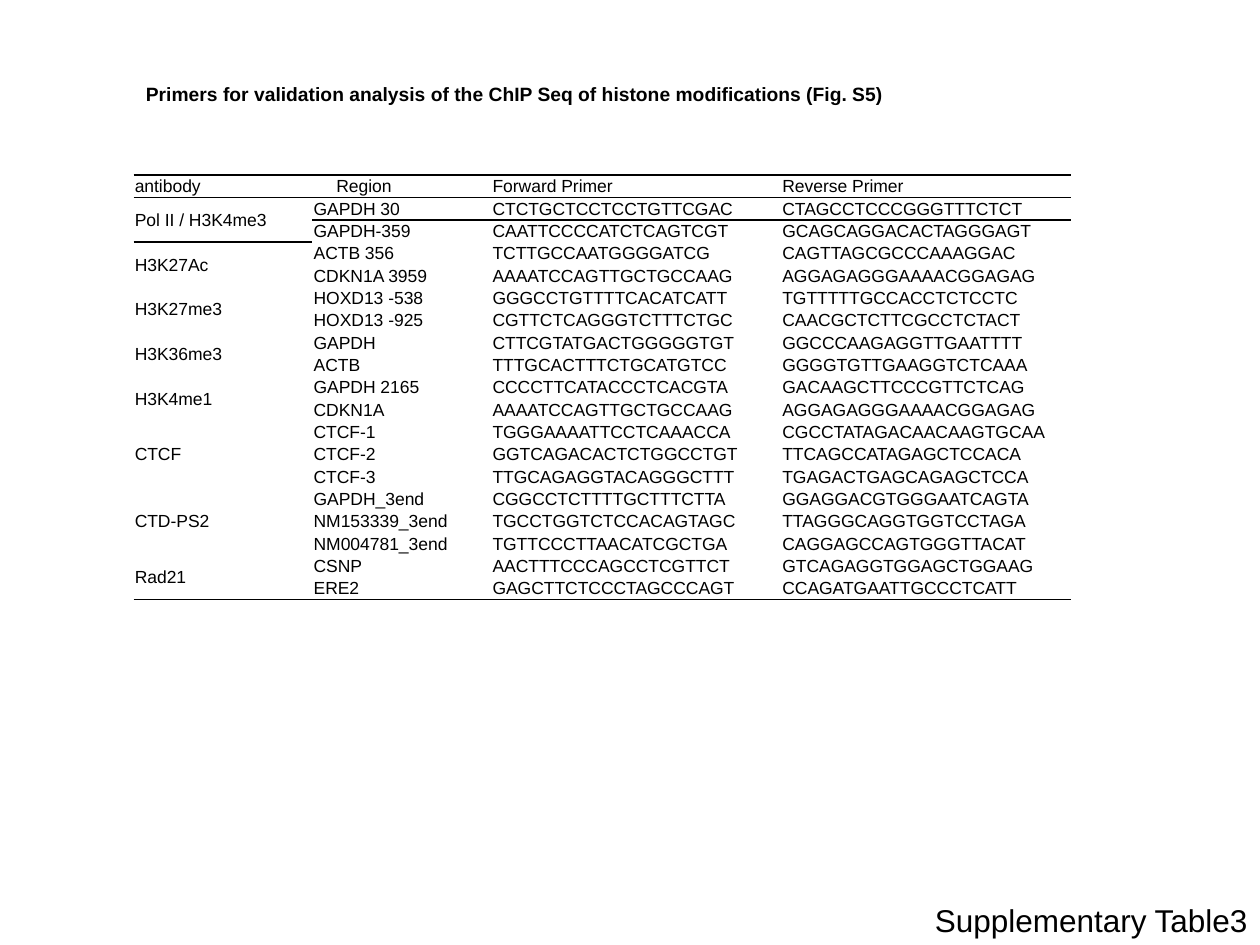
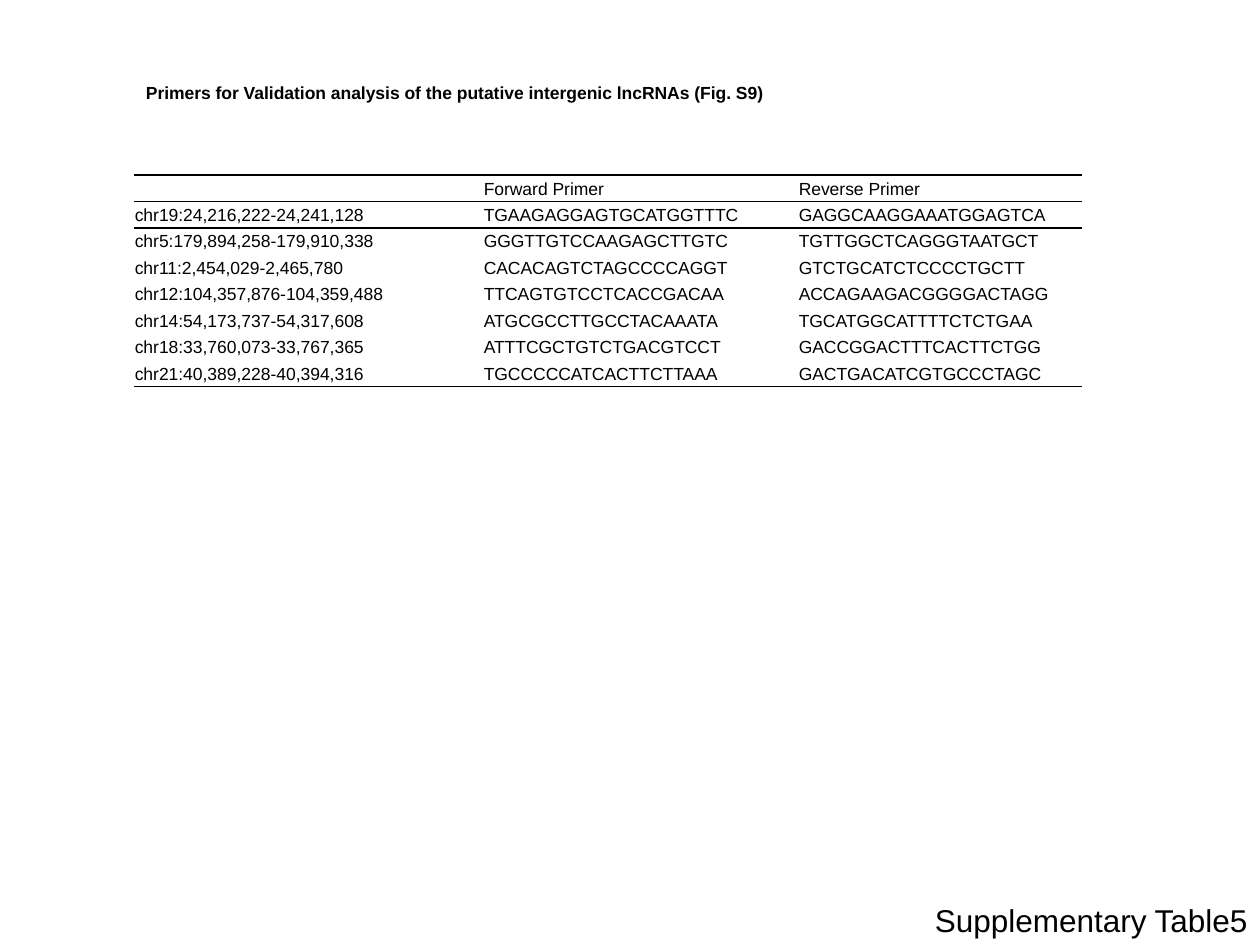
from dataclasses import dataclass

from lxml.etree import SubElement
from pptx import Presentation
from pptx.dml.color import RGBColor
from pptx.enum.text import MSO_ANCHOR, MSO_AUTO_SIZE, PP_ALIGN
from pptx.oxml.ns import qn
from pptx.slide import Slide
from pptx.table import Table, _Cell
from pptx.text.text import _Paragraph
from pptx.util import Inches, Pt

FONT = "Arial"
BLACK = "000000"
TABLE_SIZE = 10
CELL_INSET = 0.01
HEADING_INDENT = 0.19
RULE_WIDTH = Pt(1)
PLAIN_TABLE_STYLE = "{2D5ABB26-0587-4C30-8999-92F81FD0307C}"


@dataclass(frozen=True)
class PrimerTable:
    """A titled primer table; an empty first cell in the body continues the group above."""
    title: str
    title_size: float
    title_height: float
    footer: str
    column_widths: tuple[float, ...]
    row_height: float
    rows: tuple[tuple[str, ...], ...]
    indented_heading: str = ""


HISTONE_PRIMERS = PrimerTable(
    title="Primers for validation analysis of the ChIP Seq of histone modifications (Fig. S5)",
    title_size=11,
    title_height=0.29,
    footer="Supplementary Table3",
    column_widths=(1.42, 1.42, 2.3, 2.3),
    row_height=0.175,
    indented_heading="Region",
    rows=(
        ("antibody", "Region", "Forward Primer", "Reverse Primer"),
        ("Pol II / H3K4me3", "GAPDH 30", "CTCTGCTCCTCCTGTTCGAC", "CTAGCCTCCCGGGTTTCTCT"),
        ("", "GAPDH-359", "CAATTCCCCATCTCAGTCGT", "GCAGCAGGACACTAGGGAGT"),
        ("H3K27Ac", "ACTB 356", "TCTTGCCAATGGGGATCG", "CAGTTAGCGCCCAAAGGAC"),
        ("", "CDKN1A 3959", "AAAATCCAGTTGCTGCCAAG", "AGGAGAGGGAAAACGGAGAG"),
        ("H3K27me3", "HOXD13 -538", "GGGCCTGTTTTCACATCATT", "TGTTTTTGCCACCTCTCCTC"),
        ("", "HOXD13 -925", "CGTTCTCAGGGTCTTTCTGC", "CAACGCTCTTCGCCTCTACT"),
        ("H3K36me3", "GAPDH", "CTTCGTATGACTGGGGGTGT", "GGCCCAAGAGGTTGAATTTT"),
        ("", "ACTB", "TTTGCACTTTCTGCATGTCC", "GGGGTGTTGAAGGTCTCAAA"),
        ("H3K4me1", "GAPDH 2165", "CCCCTTCATACCCTCACGTA", "GACAAGCTTCCCGTTCTCAG"),
        ("", "CDKN1A", "AAAATCCAGTTGCTGCCAAG", "AGGAGAGGGAAAACGGAGAG"),
        ("CTCF", "CTCF-1", "TGGGAAAATTCCTCAAACCA", "CGCCTATAGACAACAAGTGCAA"),
        ("", "CTCF-2", "GGTCAGACACTCTGGCCTGT", "TTCAGCCATAGAGCTCCACA"),
        ("", "CTCF-3", "TTGCAGAGGTACAGGGCTTT", "TGAGACTGAGCAGAGCTCCA"),
        ("CTD-PS2", "GAPDH_3end", "CGGCCTCTTTTGCTTTCTTA", "GGAGGACGTGGGAATCAGTA"),
        ("", "NM153339_3end", "TGCCTGGTCTCCACAGTAGC", "TTAGGGCAGGTGGTCCTAGA"),
        ("", "NM004781_3end", "TGTTCCCTTAACATCGCTGA", "CAGGAGCCAGTGGGTTACAT"),
        ("Rad21", "CSNP", "AACTTTCCCAGCCTCGTTCT", "GTCAGAGGTGGAGCTGGAAG"),
        ("", "ERE2", "GAGCTTCTCCCTAGCCCAGT", "CCAGATGAATTGCCCTCATT"),
    ),
)

LNCRNA_PRIMERS = PrimerTable(
    title="Primers for Validation analysis of the putative intergenic lncRNAs (Fig. S9)",
    title_size=10,
    title_height=0.27,
    footer="Supplementary Table5",
    column_widths=(2.77, 2.5, 2.26),
    row_height=0.21,
    rows=(
        ("", "Forward Primer", "Reverse Primer"),
        ("chr19:24,216,222-24,241,128", "TGAAGAGGAGTGCATGGTTTC", "GAGGCAAGGAAATGGAGTCA"),
        ("chr5:179,894,258-179,910,338", "GGGTTGTCCAAGAGCTTGTC", "TGTTGGCTCAGGGTAATGCT"),
        ("chr11:2,454,029-2,465,780", "CACACAGTCTAGCCCCAGGT", "GTCTGCATCTCCCCTGCTT"),
        ("chr12:104,357,876-104,359,488", "TTCAGTGTCCTCACCGACAA", "ACCAGAAGACGGGGACTAGG"),
        ("chr14:54,173,737-54,317,608", "ATGCGCCTTGCCTACAAATA", "TGCATGGCATTTTCTCTGAA"),
        ("chr18:33,760,073-33,767,365", "ATTTCGCTGTCTGACGTCCT", "GACCGGACTTTCACTTCTGG"),
        ("chr21:40,389,228-40,394,316", "TGCCCCCATCACTTCTTAAA", "GACTGACATCGTGCCCTAGC"),
    ),
)


def color(value: str) -> RGBColor:
    """Turn a hex string into a colour."""
    return RGBColor.from_string(value)


def add_run(paragraph: _Paragraph, text: str, size: float, bold: bool = False) -> None:
    """Add one styled run."""
    run = paragraph.add_run()
    run.text = text
    run.font.name = FONT
    run.font.size = Pt(size)
    run.font.bold = bold
    run.font.color.rgb = color(BLACK)


def add_label(slide: Slide, text: str, box: tuple[float, float, float, float], size: float,
              bold: bool = False, alignment: PP_ALIGN = PP_ALIGN.LEFT) -> None:
    """Add a one-line text box."""
    frame = slide.shapes.add_textbox(*map(Inches, box)).text_frame
    frame.word_wrap = True
    frame.auto_size = MSO_AUTO_SIZE.SHAPE_TO_FIT_TEXT
    paragraph = frame.paragraphs[0]
    paragraph.alignment = alignment
    add_run(paragraph, text, size, bold)


def add_rule(cell: _Cell, tag: str) -> None:
    """Draw a black line on one side of a cell."""
    line = SubElement(cell._tc.get_or_add_tcPr(), qn(tag), w=str(RULE_WIDTH))
    fill = SubElement(line, qn("a:solidFill"))
    SubElement(fill, qn("a:srgbClr"), val=BLACK)


def fill_cell(cell: _Cell, text: str, indent: float, top: bool, bottom: bool) -> None:
    """Write and style one cell."""
    cell.margin_left = Inches(indent)
    cell.margin_right = cell.margin_top = Inches(CELL_INSET)
    cell.margin_bottom = 0
    cell.vertical_anchor = MSO_ANCHOR.MIDDLE
    if top:
        add_rule(cell, "a:lnT")
    if bottom:
        add_rule(cell, "a:lnB")
    cell.fill.background()
    paragraph = cell.text_frame.paragraphs[0]
    if text:
        add_run(paragraph, text, TABLE_SIZE)
    else:
        SubElement(paragraph._p, qn("a:endParaRPr"), sz=str(TABLE_SIZE * 100))


def merge_groups(table: Table, starts: list[int], row_count: int) -> None:
    """Merge the first column over the rows of each group."""
    for start, following in zip(starts, starts[1:] + [row_count]):
        if following - start > 1:
            table.cell(start, 0).merge(table.cell(following - 1, 0))


def add_primer_table(slide: Slide, content: PrimerTable) -> None:
    """Add the table with rules around its heading and below its last row."""
    rows, widths = content.rows, content.column_widths
    frame = slide.shapes.add_table(
        len(rows), len(widths), Inches(1.06), Inches(1.39),
        Inches(sum(widths)), Inches(content.row_height * len(rows)))
    table = frame.table
    table.first_row = table.horz_banding = False
    table._tbl.tblPr.find(qn("a:tableStyleId")).text = PLAIN_TABLE_STYLE
    for column, width in zip(table.columns, widths):
        column.width = Inches(width)
    starts = [index for index, row in enumerate(rows) if index and row[0]]
    last = len(rows) - 1
    for row_index, row in enumerate(rows):
        table.rows[row_index].height = Inches(content.row_height)
        for column_index, text in enumerate(row):
            closes_group = column_index == 0 and row_index == starts[-1]
            indented = text and text == content.indented_heading
            fill_cell(table.cell(row_index, column_index), text,
                      HEADING_INDENT if indented else CELL_INSET,
                      top=row_index <= 1,
                      bottom=row_index in (0, last) or closes_group)
    merge_groups(table, starts, len(rows))


def main() -> None:
    """Build both supplementary tables."""
    presentation = Presentation()
    presentation.slide_width = Inches(10)
    presentation.slide_height = Inches(7.5)
    for content in (HISTONE_PRIMERS, LNCRNA_PRIMERS):
        slide = presentation.slides.add_slide(presentation.slide_layouts[6])
        add_label(slide, content.title, (1.06, 0.6, 8.4, content.title_height),
                  content.title_size, bold=True)
        add_primer_table(slide, content)
        add_label(slide, content.footer, (5.85, 7.1, 4.15, 0.4), 18,
                  alignment=PP_ALIGN.RIGHT)
    presentation.save("out.pptx")


if __name__ == "__main__":
    main()
